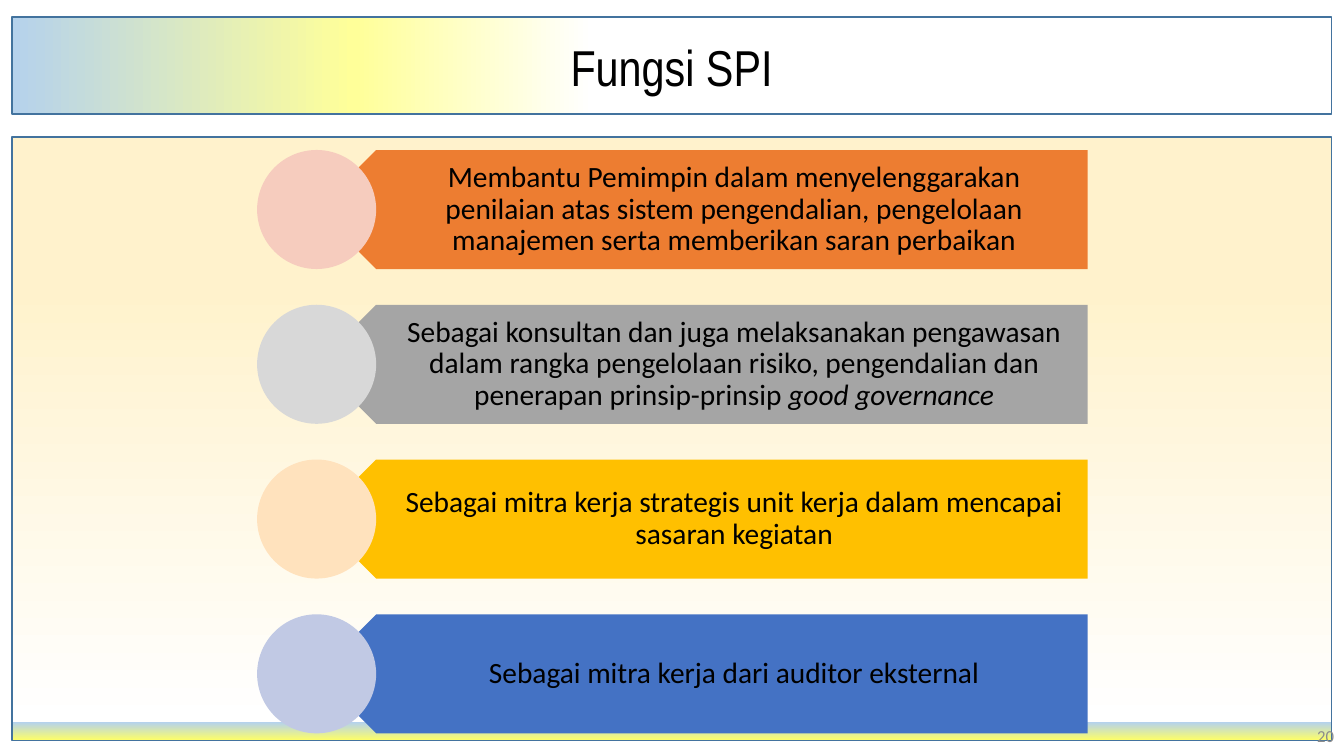
from lxml.etree import SubElement
from pptx import Presentation
from pptx.dml.color import RGBColor
from pptx.enum.shapes import MSO_SHAPE
from pptx.enum.text import MSO_ANCHOR, PP_ALIGN
from pptx.oxml.ns import qn
from pptx.util import Cm, Pt

FRAME_LEFT, FRAME_WIDTH = 0.3, 33.25
ROW_TOP, ROW_PITCH, ROW_HEIGHT = 3.78, 3.9, 3
FUNCTIONS = [
    ("ED7D31", "F6CCBE", [
        ("Membantu Pemimpin dalam menyelenggarakan penilaian atas sistem pengendalian, "
         "pengelolaan manajemen serta memberikan saran perbaikan", False)]),
    ("A5A5A5", "D8D8D8", [
        ("Sebagai konsultan dan juga melaksanakan pengawasan dalam rangka pengelolaan "
         "risiko, pengendalian dan penerapan prinsip-prinsip ", False),
        ("good governance", True)]),
    ("FFC000", "FFE2BD", [
        ("Sebagai mitra kerja strategis unit kerja dalam mencapai sasaran kegiatan", False)]),
    ("4472C4", "C1C9E4", [("Sebagai mitra kerja dari auditor eksternal", False)]),
]


def color(code):
    return RGBColor.from_string(code)


class SlideBuilder:
    body_font = "Calibri"
    title_font = "Arial Narrow"
    ink = "000000"
    outline = "43739E"

    def __init__(self, slide):
        self.slide = slide

    def block(self, preset, left, top, width, height, fill=None, rotation=0):
        block = self.slide.shapes.add_shape(preset, Cm(left), Cm(top), Cm(width), Cm(height))
        block.shadow.inherit = False
        block.rotation = rotation
        block.line.fill.background()
        if fill:
            block.fill.solid()
            block.fill.fore_color.rgb = color(fill)
        return block

    def frame(self, top, height, stops, angle):
        frame = self.block(MSO_SHAPE.ROUNDED_RECTANGLE, FRAME_LEFT, top, FRAME_WIDTH, height)
        frame.adjustments[0] = 0
        frame.line.color.rgb = color(self.outline)
        frame.line.width = Pt(1)
        frame.fill.gradient()
        gradient = frame._element.spPr.find(qn("a:gradFill"))
        for part in list(gradient):
            gradient.remove(part)
        stop_list = SubElement(gradient, qn("a:gsLst"))
        for percent, code in stops:
            stop = SubElement(stop_list, qn("a:gs"), pos=str(percent * 1000))
            SubElement(stop, qn("a:srgbClr"), val=code)
        SubElement(gradient, qn("a:lin"), ang=str(angle * 60000), scaled="0")

    def add_text(self, holder, runs, size, font, ink, align, spacing=None, insets=None):
        text = holder.text_frame
        text.word_wrap = True
        text.vertical_anchor = MSO_ANCHOR.MIDDLE
        if insets:
            (text.margin_left, text.margin_top,
             text.margin_right, text.margin_bottom) = map(Cm, insets)
        paragraph = text.paragraphs[0]
        paragraph.alignment = align
        paragraph.line_spacing = spacing
        for words, italic in runs:
            run = paragraph.add_run()
            run.text = words
            run.font.size = Pt(size)
            run.font.name = font
            run.font.italic = italic
            run.font.color.rgb = color(ink)

    def title(self, words, top, height):
        title = self.slide.shapes.title
        title.left, title.top = Cm(FRAME_LEFT), Cm(top)
        title.width, title.height = Cm(FRAME_WIDTH), Cm(height)
        self.slide.shapes._spTree.append(title._element)
        self.add_text(title, [(words, False)], 36, self.title_font, self.ink,
                      PP_ALIGN.CENTER, 0.9)

    def label(self, left, top, width, height, runs, size, ink, align, **layout):
        label = self.slide.shapes.add_textbox(Cm(left), Cm(top), Cm(width), Cm(height))
        self.add_text(label, runs, size, self.body_font, ink, align, **layout)

    def function_row(self, top, bar_fill, circle_fill, runs):
        self.block(MSO_SHAPE.PENTAGON, 7.98, top, 19.43, ROW_HEIGHT, bar_fill, 180)
        self.label(8.71, top, 18.67, ROW_HEIGHT, runs, 21, self.ink, PP_ALIGN.CENTER,
                   spacing=0.9, insets=(1.32, 0.23, 0.41, 0.23))
        self.block(MSO_SHAPE.OVAL, 6.48, top, ROW_HEIGHT, ROW_HEIGHT, circle_fill)


def main():
    deck = Presentation()
    deck.slide_width, deck.slide_height = Cm(33.87), Cm(19.05)
    page = SlideBuilder(deck.slides.add_slide(deck.slide_layouts[5]))
    page.frame(3.45, 15.21,
               [(25, "FFF2CC"), (97, "FFFFFF"), (97, "B5D2EC"), (100, "FFFF66")], 90)
    page.frame(0.43, 2.44,
               [(0, "B5D2EC"), (26, "FFFF99"), (44, "FFFFFF"), (86, "FFFFFF")], 0)
    page.title("Fungsi SPI", 0.81, 1.93)
    for row, (bar_fill, circle_fill, runs) in enumerate(FUNCTIONS):
        page.function_row(ROW_TOP + row * ROW_PITCH, bar_fill, circle_fill, runs)
    page.label(26.25, 18.03, 7.62, 1.02, [("20", False)], 12, "8C8C8C", PP_ALIGN.RIGHT)
    deck.save("out.pptx")


if __name__ == "__main__":
    main()
